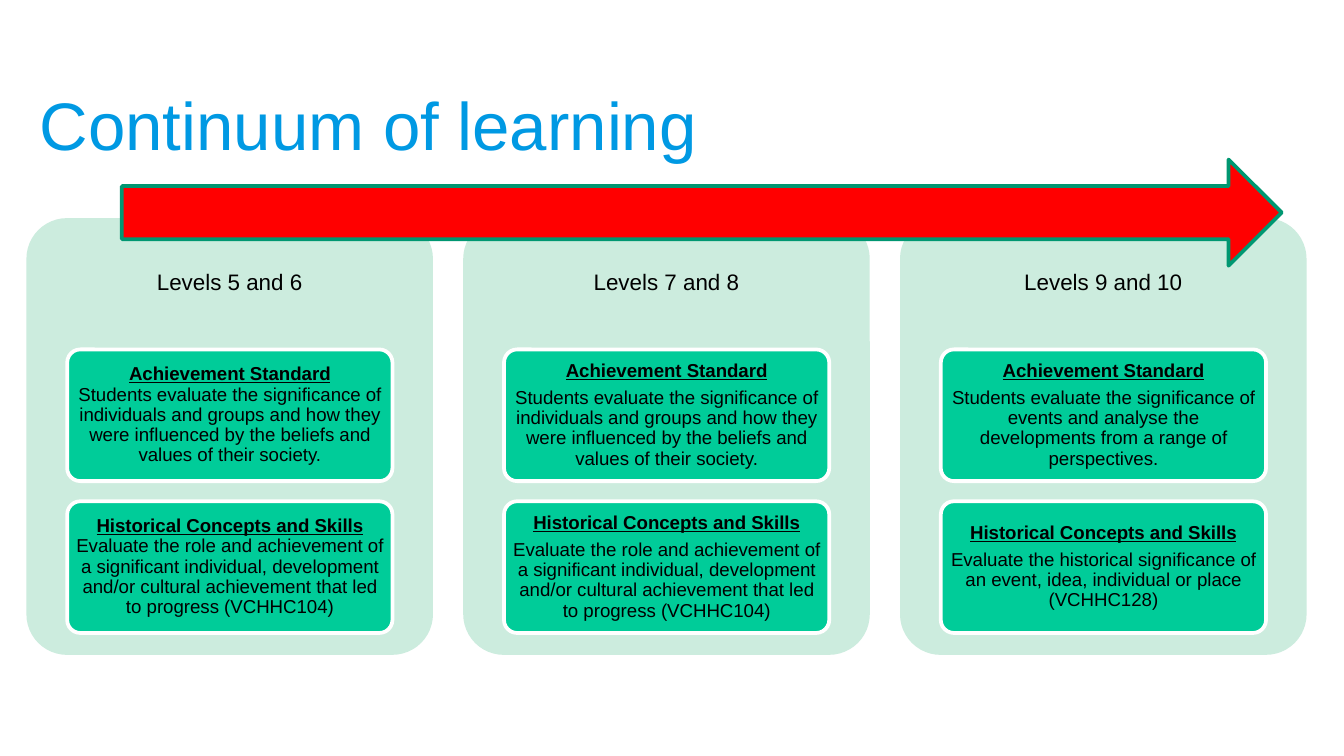
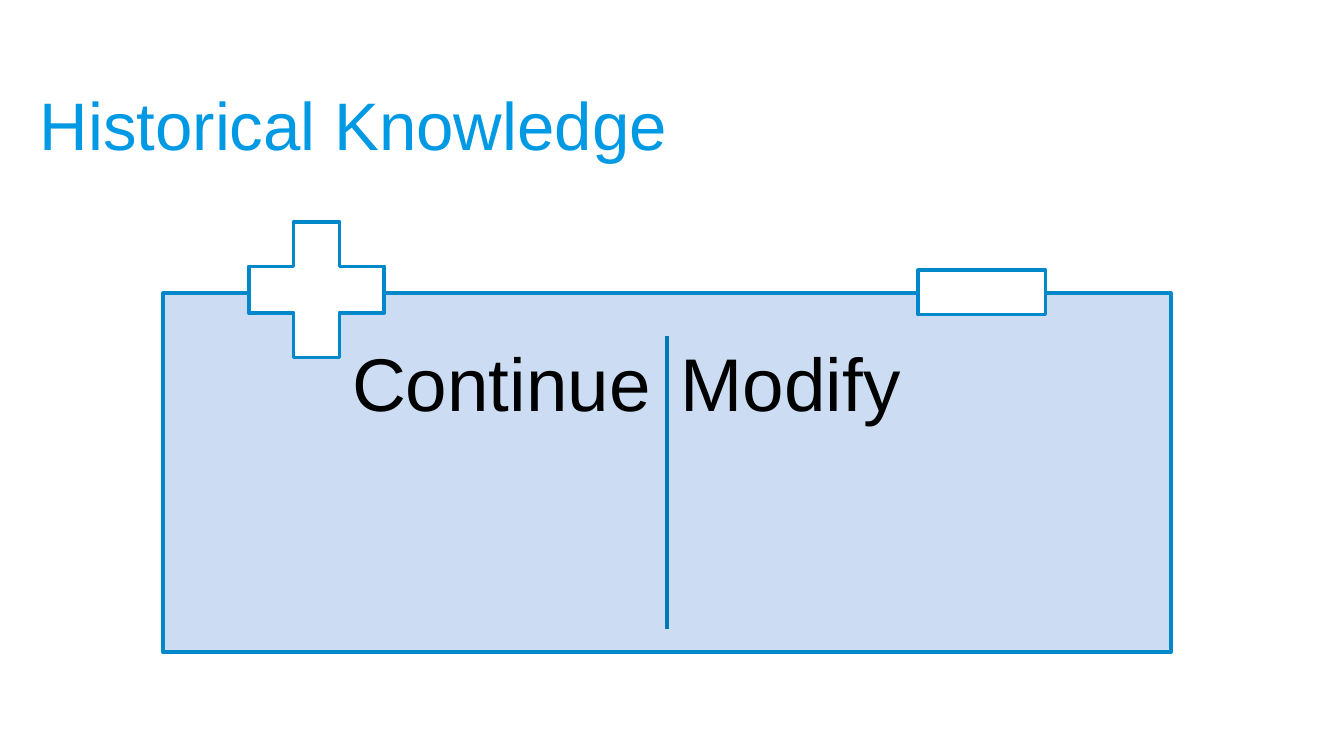
"""Builds two slides on a continuum of learning in history."""
from dataclasses import dataclass
from typing import Any, NamedTuple

from pptx import Presentation, util as u
from pptx.dml.color import RGBColor
from pptx.enum import shapes, text
from pptx.oxml.ns import qn
from pptx.oxml.xmlchemy import OxmlElement

WIDTH = u.Inches(10)
HEIGHT = WIDTH * 9 // 16
CELL = WIDTH / 100
KIND = shapes.MSO_SHAPE
MID, TOP = text.MSO_ANCHOR.MIDDLE, text.MSO_ANCHOR.TOP
LEFT, MIDST = text.PP_ALIGN.LEFT, text.PP_ALIGN.CENTER


@dataclass(frozen=True)
class Theme:
    """Colours, font and type sizes of the deck."""
    font: str = "Arial"
    title: str = "0099E3"
    ink: str = "000000"
    white: str = "FFFFFF"
    mint: str = "CCECDE"
    green: str = "00CC99"
    red: str = "FF0000"
    teal: str = "009771"
    pale: str = "CCDDF3"
    blue: str = "0088CA"
    deep: str = "0078B3"
    head: float = 36
    word: float = 40
    label: float = 12
    note: float = 10
    stroke: float = 2
    lead: float = 0.9
    after: float = 0.37


class Area(NamedTuple):
    """A box in grid cells: left, top, width, height."""
    x: float
    y: float
    w: float
    h: float

    def shift(self, dx: float, dy: float = 0) -> "Area":
        """Return the same box moved by some cells."""
        return self._replace(x=self.x + dx, y=self.y + dy)

    def size(self) -> list[int]:
        """Return the box in slide units."""
        return [round(v * CELL) for v in self]


@dataclass(frozen=True)
class Form:
    """A preset shape with its place and paint."""
    kind: Any
    area: Area
    fill: str
    line: str | None = None
    bend: float | None = None


@dataclass(frozen=True)
class Stage:
    """A column of the continuum; tight keeps each card in one paragraph."""
    name: str
    standard: str
    skill: str
    tight: bool = False


T = Theme()
TITLE = Area(1.95, 4.5, 95.3, 9.4)
PANEL = Area(1.97, 16.23, 30.25, 32.5)
LABEL = PANEL._replace(h=9.75)
CARD = Area(5, 26, 24.2, 9.8)
PITCH, STEP = 32.5, 11.3
HEADS = ("Achievement Standard", "Historical Concepts and Skills")
SOCIETY = ("Students evaluate the significance of individuals and groups and how "
           "they were influenced by the beliefs and values of their society.")
ROLE = ("Evaluate the role and achievement of a significant individual, development "
        "and/or cultural achievement that led to progress (VCHHC104)")
STAGES = (
    Stage("Levels 5 and 6", SOCIETY, ROLE, True),
    Stage("Levels 7 and 8", SOCIETY, ROLE),
    Stage("Levels 9 and 10",
          "Students evaluate the significance of events and analyse the "
          "developments from a range of perspectives.",
          "Evaluate the historical significance of an event, idea, individual "
          "or place (VCHHC128)"),
)
ARROW = Form(KIND.RIGHT_ARROW, Area(9.07, 11.87, 86.3, 7.9), T.red, T.teal)
SIGNS = (
    Form(KIND.RECTANGLE, Area(12.12, 21.83, 75, 26.7), T.pale, T.blue),
    Form(KIND.CROSS, Area(18.5, 16.5, 10.1, 10.1), T.white, T.blue, 0.33),
    Form(KIND.RECTANGLE, Area(68.3, 20.12, 9.5, 3.3), T.white, T.blue),
)
WORD = Area(25.4, 25, 23.9, 22.8)
RULE = Area(49.62, 25, 0, 21.8)


def put(item: Any, **form: Any) -> None:
    """Set attributes from a set of format values."""
    for key, val in form.items():
        setattr(item, key, val)


def rgb(code: str) -> RGBColor:
    """Return a colour from its hex code."""
    return RGBColor.from_string(code)


def frame(shape: Any, anchor: Any, pad_x: float, pad_y: float) -> Any:
    """Format a text frame and return it; pads are in inches."""
    px, py = u.Inches(pad_x), u.Inches(pad_y)
    put(shape.text_frame, word_wrap=True, vertical_anchor=anchor,
        margin_left=px, margin_right=px, margin_top=py, margin_bottom=py)
    return shape.text_frame


def para(par: Any, size: float, align: Any) -> None:
    """Set the spacing and alignment of a paragraph."""
    put(par, alignment=align, line_spacing=T.lead, space_after=u.Pt(size * T.after))


def say(par: Any, words: str, size: float, tone: str = T.ink,
        strong: bool = False) -> None:
    """Add a run; a strong one is bold and underlined."""
    run = par.add_run()
    run.text = words
    put(run.font, name=T.font, size=u.Pt(size), bold=strong, underline=strong)
    run.font.color.rgb = rgb(tone)


def draw(slide: Any, form: Form) -> Any:
    """Draw a preset shape."""
    shape = slide.shapes.add_shape(form.kind, *form.area.size())
    shape.shadow.inherit = False
    shape.fill.solid()
    shape.fill.fore_color.rgb = rgb(form.fill)
    if form.line:
        shape.line.color.rgb = rgb(form.line)
        shape.line.width = u.Pt(T.stroke)
    else:
        shape.line.fill.background()
    if form.bend is not None:
        shape.adjustments[0] = form.bend
    return shape


def write(slide: Any, area: Area, words: str, size: float, anchor: Any,
          align: Any, pad: float) -> None:
    """Add a text box of one paragraph."""
    box = frame(slide.shapes.add_textbox(*area.size()), anchor, pad, pad)
    par = box.paragraphs[0]
    para(par, size, align)
    say(par, words, size)


def card(slide: Any, area: Area, head: str, body: str, tight: bool) -> None:
    """Draw a card with a heading and a body."""
    shape = draw(slide, Form(KIND.ROUNDED_RECTANGLE, area, T.green, T.white, 0.1))
    box = frame(shape, MID, 0.03, 0.02)
    par = box.paragraphs[0]
    para(par, T.note, MIDST)
    say(par, head, T.note, strong=True)
    if tight:
        par.add_line_break()
    else:
        par = box.add_paragraph()
        para(par, T.note, MIDST)
    say(par, body, T.note)


def column(slide: Any, dx: float, stage: Stage) -> None:
    """Draw the panel, label and cards of a stage."""
    draw(slide, Form(KIND.ROUNDED_RECTANGLE, PANEL.shift(dx), T.mint, bend=0.1))
    write(slide, LABEL.shift(dx), stage.name, T.label, MID, MIDST, 0.05)
    for row, (head, body) in enumerate(zip(HEADS, (stage.standard, stage.skill))):
        card(slide, CARD.shift(dx, row * STEP), head, body, stage.tight)


def rule(slide: Any, area: Area) -> None:
    """Draw a straight line across an area."""
    x, y, w, h = area.size()
    line = slide.shapes.add_connector(shapes.MSO_CONNECTOR.STRAIGHT, x, y, x + w, y + h)
    line.line.color.rgb = rgb(T.deep)
    line.line.width = u.Pt(T.stroke)
    line._element.find(qn("p:spPr")).append(OxmlElement("a:effectLst"))


def start(deck: Any, words: str) -> Any:
    """Add a slide with its title."""
    slide = deck.slides.add_slide(deck.slide_layouts[5])
    title = slide.shapes.title
    put(title, **dict(zip(("left", "top", "width", "height"), TITLE.size())))
    box = frame(title, MID, 0.1, 0.05)
    box.auto_size = text.MSO_AUTO_SIZE.NONE
    par = box.paragraphs[0]
    par.alignment = LEFT
    say(par, words, T.head, T.title)
    return slide


def learning(deck: Any) -> None:
    """Build the slide of the three stages."""
    slide = start(deck, "Continuum of learning")
    for col, stage in enumerate(STAGES):
        column(slide, col * PITCH, stage)
    draw(slide, ARROW)


def knowledge(deck: Any) -> None:
    """Build the slide of what to continue and modify."""
    slide = start(deck, "Historical Knowledge")
    board, *signs = SIGNS
    draw(slide, board)
    for col, word in enumerate(("Continue", "Modify")):
        write(slide, WORD.shift(col * 24.45), word, T.word, TOP, LEFT, 0.08)
    for sign in signs:
        draw(slide, sign)
    rule(slide, RULE)


def main() -> None:
    """Build and save the deck."""
    deck = Presentation()
    put(deck, slide_width=WIDTH, slide_height=HEIGHT)
    learning(deck)
    knowledge(deck)
    deck.save("out.pptx")


if __name__ == "__main__":
    main()
